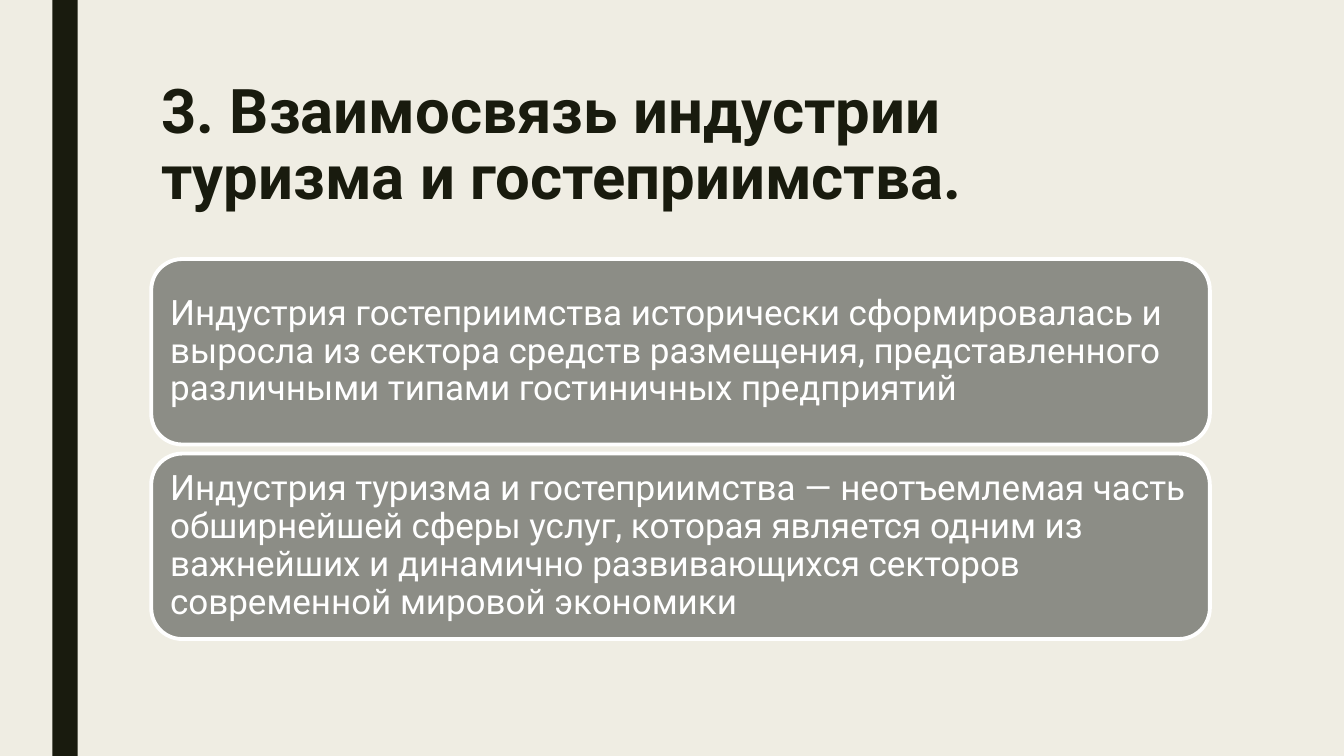
import dataclasses

import pptx
import pptx.dml.color
import pptx.enum.shapes
import pptx.enum.text
import pptx.util
from pptx.util import Inches


@dataclasses.dataclass(frozen=True)
class Theme:
    """Colours, font and type sizes of the slide."""
    background: str = "EFEDE3"
    dark: str = "191B0E"
    card: str = "8C8D86"
    light: str = "FFFFFF"
    font: str = "Roboto"
    title_size: int = 44
    card_size: int = 25
    card_border: float = 2.75


THEME = Theme()
LEFT = 1.5
WIDTH = 10.5
CARD_TOP = 2.57
CARD_HEIGHT = 1.84
CARD_PITCH = 1.93

TITLE = "3. Взаимосвязь индустрии туризма и гостеприимства."
STATEMENTS = [
    "Индустрия гостеприимства исторически сформировалась и выросла из сектора "
    "средств размещения, представленного различными типами гостиничных предприятий",
    "Индустрия туризма и гостеприимства — неотъемлемая часть обширнейшей сферы услуг, "
    "которая является одним из важнейших и динамично развивающихся секторов "
    "современной мировой экономики",
]


def set_fill(fill, color):
    """Give a fill one solid colour."""
    fill.solid()
    fill.fore_color.rgb = pptx.dml.color.RGBColor.from_string(color)


def write_text(frame, text, size, color, spacing, anchor, bold=False):
    """Write one left-aligned, wrapped paragraph into a text frame."""
    frame.word_wrap = True
    frame.auto_size = pptx.enum.text.MSO_AUTO_SIZE.NONE
    frame.vertical_anchor = anchor
    para = frame.paragraphs[0]
    para.text = text
    para.alignment = pptx.enum.text.PP_ALIGN.LEFT
    para.line_spacing = spacing
    para.font.name = THEME.font
    para.font.size = pptx.util.Pt(size)
    para.font.bold = bold
    para.font.color.rgb = pptx.dml.color.RGBColor.from_string(color)


def add_side_bar(page):
    """Add the dark full-height bar on the left."""
    bar = page.shapes.add_shape(
        pptx.enum.shapes.MSO_SHAPE.RECTANGLE,
        Inches(0.52), Inches(0), Inches(0.25), Inches(7.5))
    bar.shadow.inherit = False
    set_fill(bar.fill, THEME.dark)
    bar.line.fill.background()


def place_title(page, text):
    """Move, fill and format the title placeholder."""
    title = page.shapes.title
    title.left, title.top = Inches(LEFT), Inches(0.75)
    title.width, title.height = Inches(WIDTH), Inches(1.62)
    write_text(title.text_frame, text, THEME.title_size, THEME.dark, 0.89,
               pptx.enum.text.MSO_ANCHOR.TOP, bold=True)


def add_card(page, top, text):
    """Add a rounded card holding one statement."""
    card = page.shapes.add_shape(
        pptx.enum.shapes.MSO_SHAPE.ROUNDED_RECTANGLE,
        Inches(LEFT), Inches(top), Inches(WIDTH), Inches(CARD_HEIGHT))
    card.shadow.inherit = False
    set_fill(card.fill, THEME.card)
    set_fill(card.line.fill, THEME.light)
    card.line.width = pptx.util.Pt(THEME.card_border)
    frame = card.text_frame
    frame.margin_left = frame.margin_right = Inches(0.1)
    frame.margin_top = frame.margin_bottom = Inches(0.1)
    write_text(frame, text, THEME.card_size, THEME.light, 0.9,
               pptx.enum.text.MSO_ANCHOR.MIDDLE)


def main():
    """Build the slide and save the deck."""
    deck = pptx.Presentation()
    deck.slide_width, deck.slide_height = Inches(13.33), Inches(7.5)
    page = deck.slides.add_slide(deck.slide_layouts.get_by_name("Title Only"))
    set_fill(page.background.fill, THEME.background)
    add_side_bar(page)
    place_title(page, TITLE)
    for index, statement in enumerate(STATEMENTS):
        add_card(page, CARD_TOP + index * CARD_PITCH, statement)
    deck.save("out.pptx")


if __name__ == "__main__":
    main()
